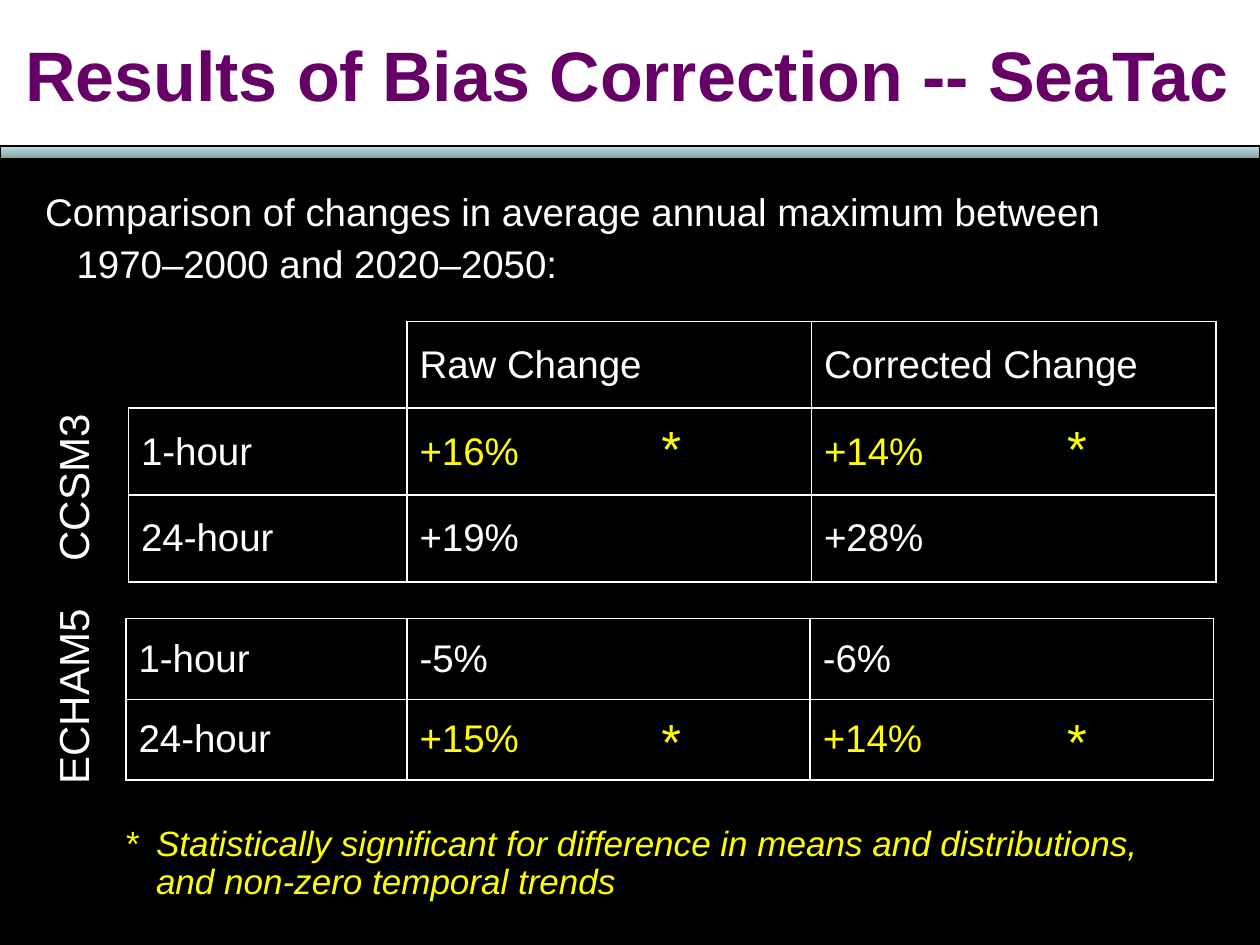
"""Build the slide on bias correction results for SeaTac."""
from lxml import etree
from pptx import Presentation
from pptx.dml.color import RGBColor
from pptx.enum.shapes import MSO_SHAPE
from pptx.enum.text import MSO_ANCHOR
from pptx.oxml.ns import qn
from pptx.util import Inches, Pt

RECT = MSO_SHAPE.RECTANGLE
TOP, MIDDLE = MSO_ANCHOR.TOP, MSO_ANCHOR.MIDDLE
BLACK = RGBColor(0x00, 0x00, 0x00)
WHITE = RGBColor(0xFF, 0xFF, 0xFF)
YELLOW = RGBColor(0xFF, 0xFF, 0x00)
PURPLE = RGBColor(0x66, 0x00, 0x66)
PALE = RGBColor(0xBB, 0xE0, 0xE3)
TEAL = RGBColor(0x86, 0xA0, 0xA2)

TITLE = "Results of Bias Correction -- SeaTac"
INTRO = ("Comparison of changes in average annual maximum between "
         "1970–2000 and 2020–2050:")
NOTE = ("*\tStatistically significant for difference in means and "
        "distributions, and non-zero temporal trends")
TABLES = [
    {"at": (1.02, 2.55), "cols": (2.21, 3.21, 3.21), "row": 0.69, "hot": 1,
     "rows": [("", "Raw Change", "Corrected Change"),
              ("1-hour", "+16%", "+14%"),
              ("24-hour", "+19%", "+28%")]},
    {"at": (1, 4.91), "cols": (2.23, 3.2, 3.2), "row": 0.64, "hot": 1,
     "rows": [("1-hour", "-5%", "-6%"),
              ("24-hour", "+15%", "+14%")]},
]
MODELS = [("CCSM3", (-0.2, 3.53, 1.55, 0.5)),
          ("ECHAM5", (-0.34, 5.16, 1.83, 0.5))]
STARS = [(x, y) for y in (3.26, 5.58) for x in (5.15, 8.37)]

deck = Presentation()
deck.slide_width, deck.slide_height = Inches(10), Inches(7.5)
UNIT = deck.slide_width / 10
slide = deck.slides.add_slide(deck.slide_layouts[6])
slide.background.fill.solid()
slide.background.fill.fore_color.rgb = BLACK


def grid(*spans):
    """Turn grid units into slide lengths."""
    return [round(span * UNIT) for span in spans]


def write(frame, text, size=22, color=WHITE, bold=False, italic=False,
          hang=0, lead=None, anchor=TOP, wrap=True):
    """Put one formatted paragraph into a text frame."""
    frame.word_wrap = wrap
    frame.vertical_anchor = anchor
    para = frame.paragraphs[0]
    if hang:
        props = para._p.get_or_add_pPr()
        props.set("marL", str(Inches(hang)))
        props.set("indent", str(-Inches(hang)))
    if lead:
        para.line_spacing = lead
    run = para.add_run()
    run.text = text
    font = run.font
    font.name, font.size = "Arial", Pt(size)
    font.bold, font.italic = bold, italic
    font.color.rgb = color


def label(text, spot, turn=0, **style):
    """Add a text box."""
    box = slide.shapes.add_textbox(*grid(*spot))
    box.rotation = turn
    write(box.text_frame, text, **style)


def band(spot, edge):
    """Add a flat bar with a thin line."""
    bar = slide.shapes.add_shape(RECT, *grid(*spot))
    bar.shadow.inherit = False
    bar.line.color.rgb = edge
    bar.line.width = Pt(0.75)
    return bar


def border(cell, sides):
    """Draw white lines on the named sides and none on the rest."""
    props = cell._tc.get_or_add_tcPr()
    for spot, side in enumerate("LRTB"):
        line = etree.Element(qn("a:ln" + side), w=str(Pt(1)))
        if side in sides:
            fill = etree.SubElement(line, qn("a:solidFill"))
            etree.SubElement(fill, qn("a:srgbClr"), val=str(WHITE))
        else:
            etree.SubElement(line, qn("a:noFill"))
        props.insert(spot, line)


def table(at, cols, row, hot, rows):
    """Add a ruled table whose hot row has yellow values."""
    size = sum(cols), row * len(rows)
    body = slide.shapes.add_table(
        len(rows), len(cols), *grid(*at, *size)).table
    body.first_row = body.horz_banding = False
    for col, width in zip(body.columns, grid(*cols)):
        col.width = width
    for i, texts in enumerate(rows):
        body.rows[i].height = grid(row)[0]
        for j, text in enumerate(texts):
            cell = body.cell(i, j)
            cell.fill.background()
            cell.vertical_anchor = MIDDLE
            border(cell, "LRTB" if text else "RB")
            if text:
                color = YELLOW if i == hot and j else WHITE
                write(cell.text_frame, text, color=color, wrap=None,
                      anchor=None)


head = band((0, 0, 10, 1.17), WHITE)
head.fill.solid()
head.fill.fore_color.rgb = WHITE
frame = head.text_frame
frame.margin_left = Inches(0.2)
frame.margin_right = frame.margin_top = frame.margin_bottom = Inches(0.1)
write(frame, TITLE, size=40, color=PURPLE, bold=True, anchor=MIDDLE,
      wrap=False)
frame.paragraphs[0].alignment = 1

rule = band((0, 1.16, 10, 0.1), BLACK)
rule.fill.gradient()
rule.fill.gradient_angle = 270
for stop, color in zip(rule.fill.gradient_stops, (PALE, TEAL)):
    stop.color.rgb = color

for spec_row in TABLES:
    table(**spec_row)
for name, spot in MODELS:
    label(name, spot, turn=270, size=24)
label(INTRO, (0.26, 1.39, 9, 1.09), hang=0.25, lead=Pt(30))
label(NOTE, (0.89, 6.51, 8.66, 0.54), size=20, color=YELLOW, italic=True,
      hang=0.25, lead=0.9)
for x, y in STARS:
    label("*", (x, y, 0.49, 0.58), size=29, color=YELLOW)

deck.save("out.pptx")
